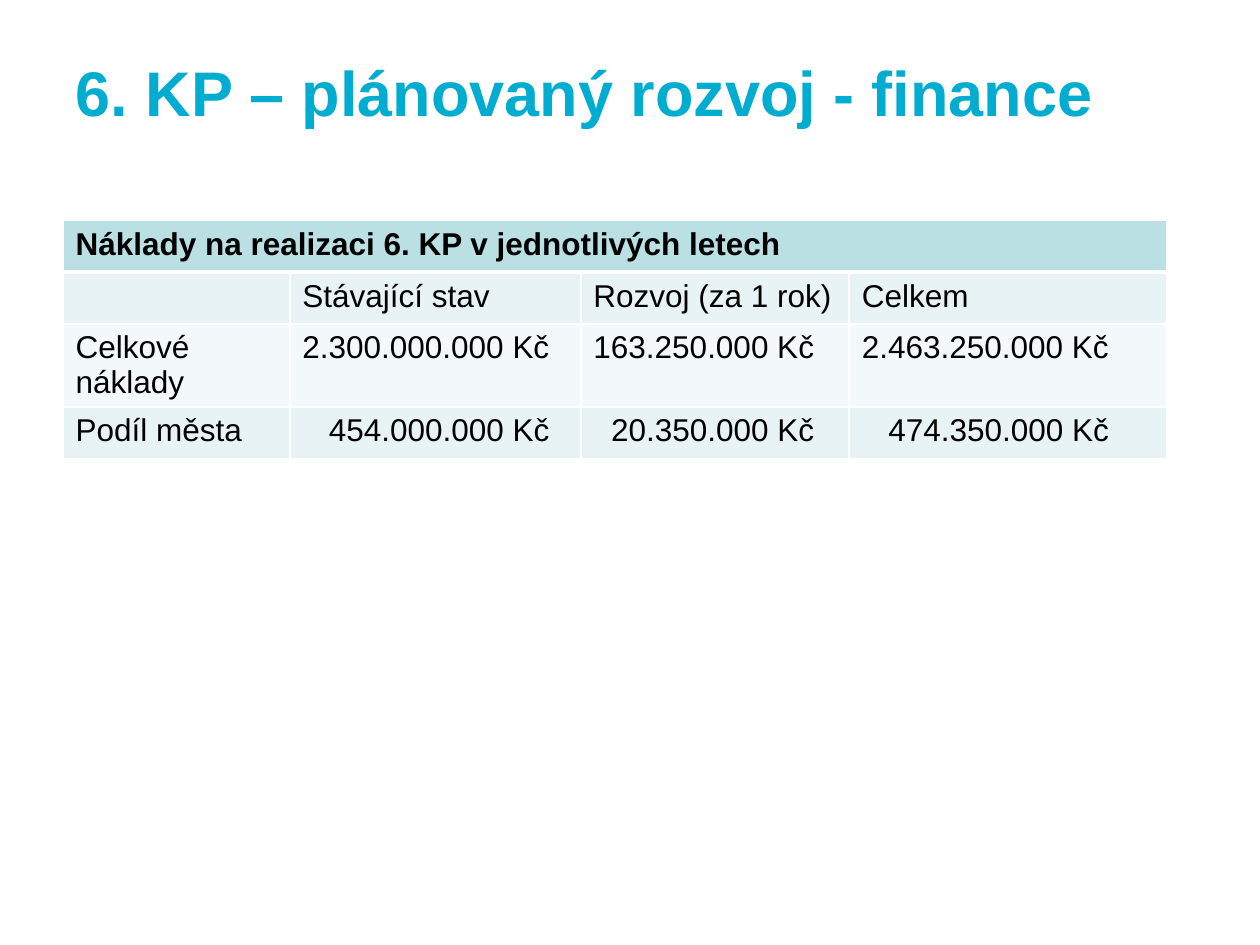
from dataclasses import dataclass

from lxml import etree
from pptx import Presentation
from pptx.dml.color import RGBColor
from pptx.enum.text import MSO_ANCHOR, PP_ALIGN
from pptx.oxml.ns import qn
from pptx.util import Inches, Pt

LEFT = PP_ALIGN.LEFT
MIDDLE = MSO_ANCHOR.MIDDLE
TITLE_ONLY = 5


@dataclass(frozen=True)
class Theme:
    font: str = "Arial"
    title: str = "00ADD0"
    text: str = "000000"
    border: str = "FFFFFF"
    header: str = "BBE0E3"
    bands: tuple = ("E7F3F4", "F3F9FA")
    title_size: int = 36
    body_size: int = 18


THEME = Theme()

HEADING = "Náklady na realizaci 6. KP v jednotlivých letech"
COSTS = [
    ["", "Stávající stav", "Rozvoj (za 1 rok)", "Celkem"],
    ["Celkové náklady", "2.300.000.000 Kč", "163.250.000 Kč", "2.463.250.000 Kč"],
    ["Podíl města", "454.000.000 Kč", "20.350.000 Kč", "474.350.000 Kč"],
]
COL_WIDTHS = [1.8, 2.31, 2.13, 2.52]
ROW_HEIGHT = 0.41
# Extra left inset that lines the shorter amounts up with those above
SHARE_INDENTS = [0, 0.21, 0.14, 0.21]


def write_text(tf, text, size=THEME.body_size, color=THEME.text, bold=False):
    p = tf.paragraphs[0]
    p.alignment = LEFT
    if not text:
        return
    r = p.add_run()
    r.text = text
    r.font.name = THEME.font
    r.font.size = Pt(size)
    r.font.bold = bold
    r.font.color.rgb = RGBColor.from_string(color)


def set_borders(cell, top=1, bottom=1):
    tc_pr = cell._tc.get_or_add_tcPr()
    for side, width in (("L", 1), ("R", 1), ("T", top), ("B", bottom)):
        ln = etree.SubElement(tc_pr, qn(f"a:ln{side}"), w=str(Pt(width)))
        fill = etree.SubElement(ln, qn("a:solidFill"))
        etree.SubElement(fill, qn("a:srgbClr"), val=THEME.border)


def format_cell(cell, fill, indent=0, top=1, bottom=1):
    cell.margin_left = Inches(0.1 + indent)
    cell.margin_right = Inches(0.1)
    cell.margin_top = cell.margin_bottom = Inches(0.05)
    set_borders(cell, top, bottom)
    cell.fill.solid()
    cell.fill.fore_color.rgb = RGBColor.from_string(fill)


def add_title(slide, text):
    sp = slide.shapes.title
    sp.left, sp.top = Inches(0.5), Inches(0.3)
    sp.width, sp.height = Inches(9), Inches(0.85)
    sp.text_frame.vertical_anchor = MIDDLE
    write_text(sp.text_frame, text, THEME.title_size, THEME.title, bold=True)


def add_cost_table(slide):
    frame = slide.shapes.add_table(len(COSTS) + 1, len(COL_WIDTHS), Inches(0.5),
                                   Inches(1.75), Inches(8.75), Inches(1.92))
    table = frame.table
    for column, width in zip(table.columns, COL_WIDTHS):
        column.width = Inches(width)
    for row in table.rows:
        row.height = Inches(ROW_HEIGHT)

    # Heading across all columns
    for cell in table.rows[0].cells:
        format_cell(cell, THEME.header, bottom=3)
    heading = table.cell(0, 0)
    heading.merge(table.cell(0, len(COL_WIDTHS) - 1))
    write_text(heading.text_frame, HEADING, bold=True)

    # Banded rows
    for i, values in enumerate(COSTS):
        for j, value in enumerate(values):
            cell = table.cell(i + 1, j)
            indent = SHARE_INDENTS[j] if i == len(COSTS) - 1 else 0
            format_cell(cell, THEME.bands[i % 2], indent, top=3 if i == 0 else 1)
            write_text(cell.text_frame, value)


def main():
    prs = Presentation()
    prs.slide_width, prs.slide_height = Inches(10), Inches(7.5)
    slide = prs.slides.add_slide(prs.slide_layouts[TITLE_ONLY])
    add_title(slide, "6. KP – plánovaný rozvoj - finance")
    add_cost_table(slide)
    prs.save("out.pptx")


if __name__ == "__main__":
    main()
